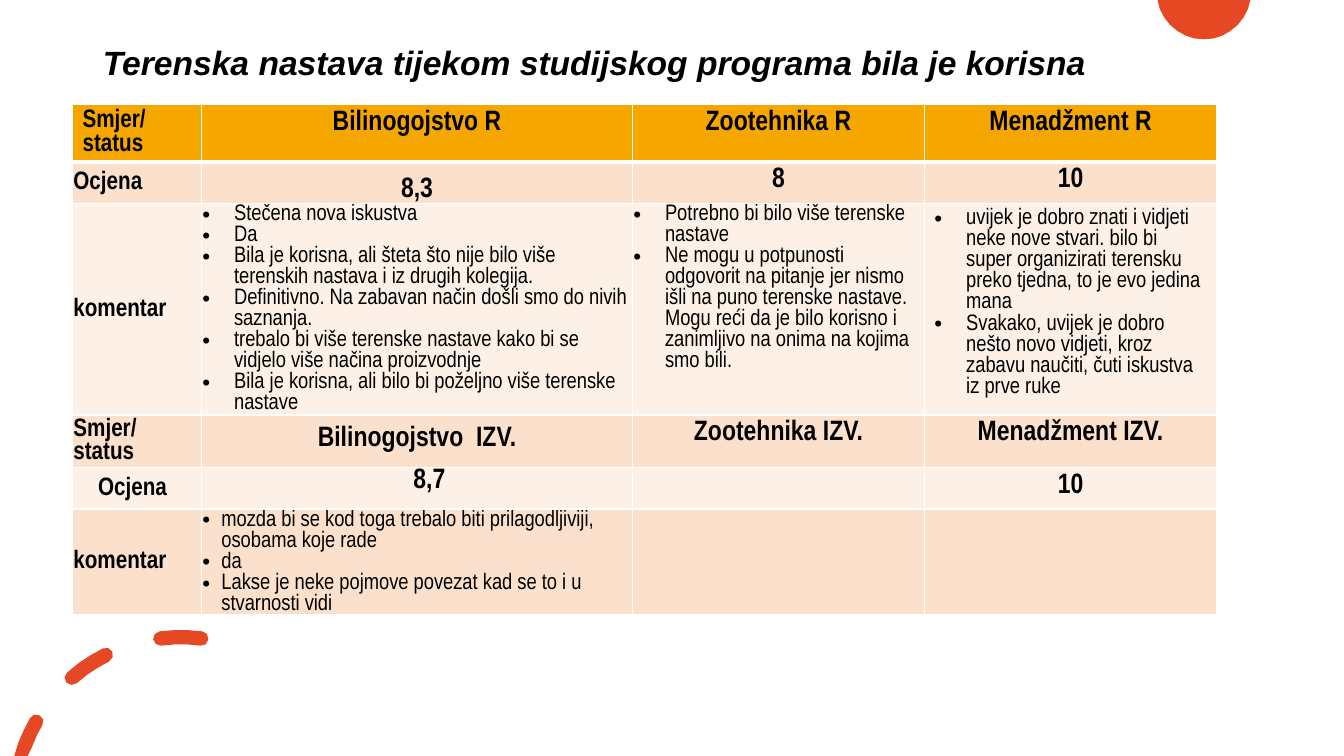
from dataclasses import dataclass
from math import cos, radians, sin

from lxml.etree import SubElement
from pptx import Presentation
from pptx.dml.color import RGBColor
from pptx.enum.text import MSO_ANCHOR as Anchor, MSO_AUTO_SIZE as AutoSize, PP_ALIGN as Align
from pptx.oxml.ns import qn
from pptx.util import Cm, Pt


@dataclass(frozen=True)
class Theme:
    accent: RGBColor = RGBColor(0xE6, 0x48, 0x23)
    header: RGBColor = RGBColor(0xF5, 0xA7, 0x00)
    dark_band: RGBColor = RGBColor(0xFB, 0xE1, 0xCC)
    light_band: RGBColor = RGBColor(0xFD, 0xF1, 0xE7)
    border: RGBColor = RGBColor(0xFF, 0xFF, 0xFF)
    text: RGBColor = RGBColor(0, 0, 0)
    title_font: str = "Arial"
    table_font: str = "Arial Narrow"
    title_size: Pt = Pt(24)
    value_size: Pt = Pt(20)
    label_size: Pt = Pt(18)
    comment_size: Pt = Pt(16)


THEME = Theme()
SLIDE_WIDTH, SLIDE_HEIGHT = 33.87, 19.05

# Cell margins in cm: left, top, right, bottom
ROOMY = (0.25, 0.13, 0.25, 0.13)
FLUSH = (0.02, 0.02, 0.02, 0)
RAISED = (0.02, 0.02, 0.02, 0.38)
INDENTED = (0.64, 0.02, 0.02, 0)

COLUMN_WIDTHS = (3.25, 10.86, 7.36, 7.36)
ROW_HEIGHTS = (1.42, 1.04, 5.33, 1.33, 1.04, 2.67)

PLANT_COMMENTS = [
    "Stečena nova iskustva",
    "Da",
    "Bila je korisna, ali šteta što nije bilo više terenskih nastava i iz drugih kolegija.",
    "Definitivno. Na zabavan način došli smo do nivih saznanja.",
    "trebalo bi više terenske nastave kako bi se vidjelo više načina proizvodnje",
    "Bila je korisna, ali bilo bi poželjno više terenske nastave",
]
ANIMAL_COMMENTS = [
    "Potrebno bi bilo više terenske nastave",
    "Ne mogu u potpunosti odgovorit na pitanje jer nismo išli na puno terenske nastave. "
    "Mogu reći da je bilo korisno i zanimljivo na onima na kojima smo bili.",
]
MANAGEMENT_COMMENTS = [
    "uvijek je dobro znati i vidjeti neke nove stvari. bilo bi super organizirati terensku "
    "preko tjedna, to je evo jedina mana",
    "Svakako, uvijek je dobro nešto novo vidjeti, kroz zabavu naučiti, čuti iskustva iz prve ruke",
]
PART_TIME_COMMENTS = [
    "mozda bi se kod toga trebalo biti prilagodljiviji, osobama koje rade",
    "da",
    "Lakse je neke pojmove povezat kad se to i u stvarnosti vidi",
]


def format_runs(paragraph, font_name, size, bold, italic=False):
    for run in paragraph.runs:
        run.font.name = font_name
        run.font.size = size
        run.font.bold = bold
        run.font.italic = italic
        run.font.color.rgb = THEME.text


def add_bullet(paragraph, indent):
    properties = paragraph._p.get_or_add_pPr()
    properties.set("marL", str(Cm(indent)))
    properties.set("indent", str(-Cm(indent)))
    SubElement(properties, qn("a:buFont")).set("typeface", "Arial")
    SubElement(properties, qn("a:buChar")).set("char", "•")


def add_bottom_border(cell, width):
    line = SubElement(cell._tc.get_or_add_tcPr(), qn("a:lnB"))
    line.set("w", str(width))
    SubElement(SubElement(line, qn("a:solidFill")), qn("a:srgbClr")).set("val", str(THEME.border))


def fill_cell(cell, lines, size, margins, anchor=Anchor.TOP, bold=True, align=Align.LEFT, indent=0):
    left, top, right, bottom = margins
    cell.margin_left, cell.margin_top = Cm(left), Cm(top)
    cell.margin_right, cell.margin_bottom = Cm(right), Cm(bottom)
    cell.vertical_anchor = anchor
    cell.text_frame.text = "\n".join(lines)
    for paragraph in cell.text_frame.paragraphs:
        paragraph.alignment = align
        format_runs(paragraph, THEME.table_font, size, bold)
        if indent:
            add_bullet(paragraph, indent)


def fill_label(cell, lines, margins=FLUSH, anchor=Anchor.MIDDLE):
    fill_cell(cell, lines, THEME.label_size, margins, anchor)


def fill_value(cell, text, margins=ROOMY, anchor=Anchor.TOP):
    fill_cell(cell, [text], THEME.value_size, margins, anchor, align=Align.CENTER)


def fill_comments(cell, comments, margins=FLUSH, indent=0.8):
    fill_cell(cell, comments, THEME.comment_size, margins, bold=False, indent=indent)


def add_title(slide, text):
    title = slide.shapes.title
    title.left, title.top, title.width, title.height = Cm(2.34), Cm(0.18), Cm(29.21), Cm(2.87)
    frame = title.text_frame
    frame.text = text
    frame.auto_size = AutoSize.NONE
    frame.vertical_anchor = Anchor.MIDDLE
    paragraph = frame.paragraphs[0]
    paragraph.alignment = Align.LEFT
    paragraph.line_spacing = 0.9
    format_runs(paragraph, THEME.title_font, THEME.title_size, True, True)


def add_banded_table(slide):
    table = slide.shapes.add_table(
        len(ROW_HEIGHTS), len(COLUMN_WIDTHS), Cm(1.83), Cm(2.63),
        Cm(sum(COLUMN_WIDTHS)), Cm(sum(ROW_HEIGHTS))).table
    for column, width in zip(table.columns, COLUMN_WIDTHS):
        column.width = Cm(width)
    bands = (THEME.light_band, THEME.dark_band)
    for index, (row, height) in enumerate(zip(table.rows, ROW_HEIGHTS)):
        row.height = Cm(height)
        for cell in row.cells:
            if index == 0:
                add_bottom_border(cell, Pt(3))
            cell.fill.solid()
            cell.fill.fore_color.rgb = bands[index % 2] if index else THEME.header
    return table


def fill_survey(table):
    cell = table.cell
    # Row labels
    fill_label(cell(0, 0), ["Smjer/", "status"], ROOMY, Anchor.TOP)
    fill_label(cell(1, 0), ["Ocjena"])
    fill_label(cell(3, 0), ["Smjer/", "status"])
    fill_label(cell(4, 0), ["Ocjena"], INDENTED)
    for row in (2, 5):
        fill_label(cell(row, 0), ["komentar"])

    # Programme names and grades
    for column, name in enumerate(("Bilinogojstvo R", "Zootehnika R", "Menadžment R"), 1):
        fill_value(cell(0, column), name)
    fill_value(cell(1, 1), "8,3", FLUSH, Anchor.BOTTOM)
    fill_value(cell(1, 2), "8")
    fill_value(cell(1, 3), "10")
    fill_value(cell(3, 1), "Bilinogojstvo  IZV.", RAISED, Anchor.BOTTOM)
    fill_value(cell(3, 2), "Zootehnika IZV.")
    fill_value(cell(3, 3), "Menadžment IZV.")
    fill_value(cell(4, 1), "8,7", INDENTED)
    fill_value(cell(4, 3), "10")

    # Comments
    fill_comments(cell(2, 1), PLANT_COMMENTS)
    fill_comments(cell(2, 2), ANIMAL_COMMENTS)
    fill_comments(cell(2, 3), MANAGEMENT_COMMENTS, ROOMY)
    fill_comments(cell(5, 1), PART_TIME_COMMENTS, indent=0.48)


def arc_points(center, radius, start, end, steps):
    angles = [radians(start + (end - start) * step / steps) for step in range(steps + 1)]
    return [(center[0] + radius * cos(angle), center[1] - radius * sin(angle)) for angle in angles]


def dash_outline(center, radius, half_width, start, end):
    start_cap, end_cap = arc_points(center, radius, start, end, 1)
    points = (arc_points(center, radius + half_width, start, end, 3)
              + arc_points(end_cap, half_width, end, end + 180, 4)[1:-1]
              + arc_points(center, radius - half_width, end, start, 3)
              + arc_points(start_cap, half_width, start + 180, start + 360, 4)[1:-1])
    return [(x, min(y, SLIDE_HEIGHT)) for x, y in points]


def add_outline(slide, contours):
    first, *others = [[(round(x * 100), round(y * 100)) for x, y in points] for points in contours]
    builder = slide.shapes.build_freeform(*first[0], scale=Cm(0.01))
    builder.add_line_segments(first[1:], close=True)
    for points in others:
        builder.move_to(*points[0])
        builder.add_line_segments(points[1:], close=True)
    shape = builder.convert_to_shape()
    shape.shadow.inherit = False
    shape.fill.solid()
    shape.fill.fore_color.rgb = THEME.accent
    shape.line.fill.background()


def main():
    presentation = Presentation()
    presentation.slide_width, presentation.slide_height = Cm(SLIDE_WIDTH), Cm(SLIDE_HEIGHT)
    slide = presentation.slides.add_slide(presentation.slide_layouts[5])

    # Corner decorations: cut circle and dashed arc
    add_outline(slide, [arc_points((30.34, -0.2), 1.19, 189.7, 350.3, 14)])
    dash_angles = ((150.5, 164.1), (116.7, 131), (82.8, 97))
    add_outline(slide, [dash_outline((4.55, 20.24), 4.18, 0.18, start, end)
                        for start, end in dash_angles])

    add_title(slide, "Terenska nastava tijekom studijskog programa bila je korisna")
    fill_survey(add_banded_table(slide))
    presentation.save("out.pptx")


if __name__ == "__main__":
    main()
